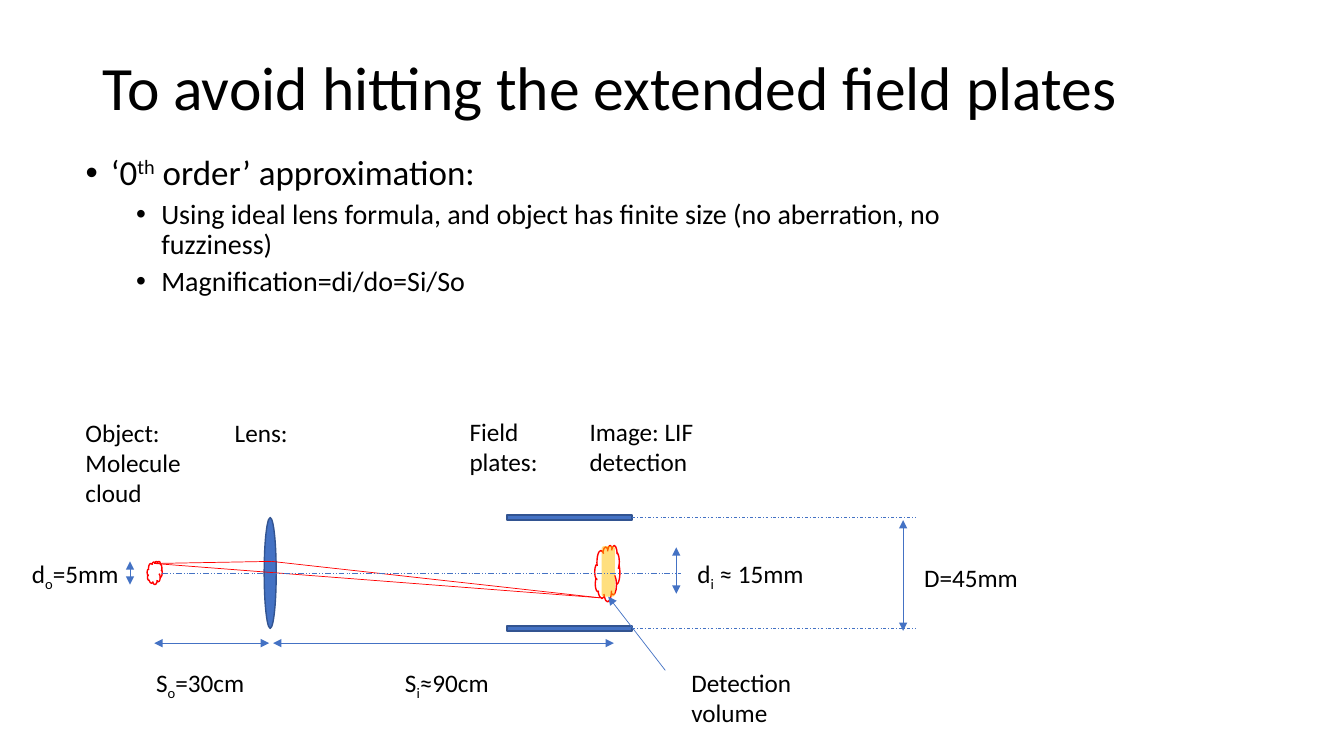
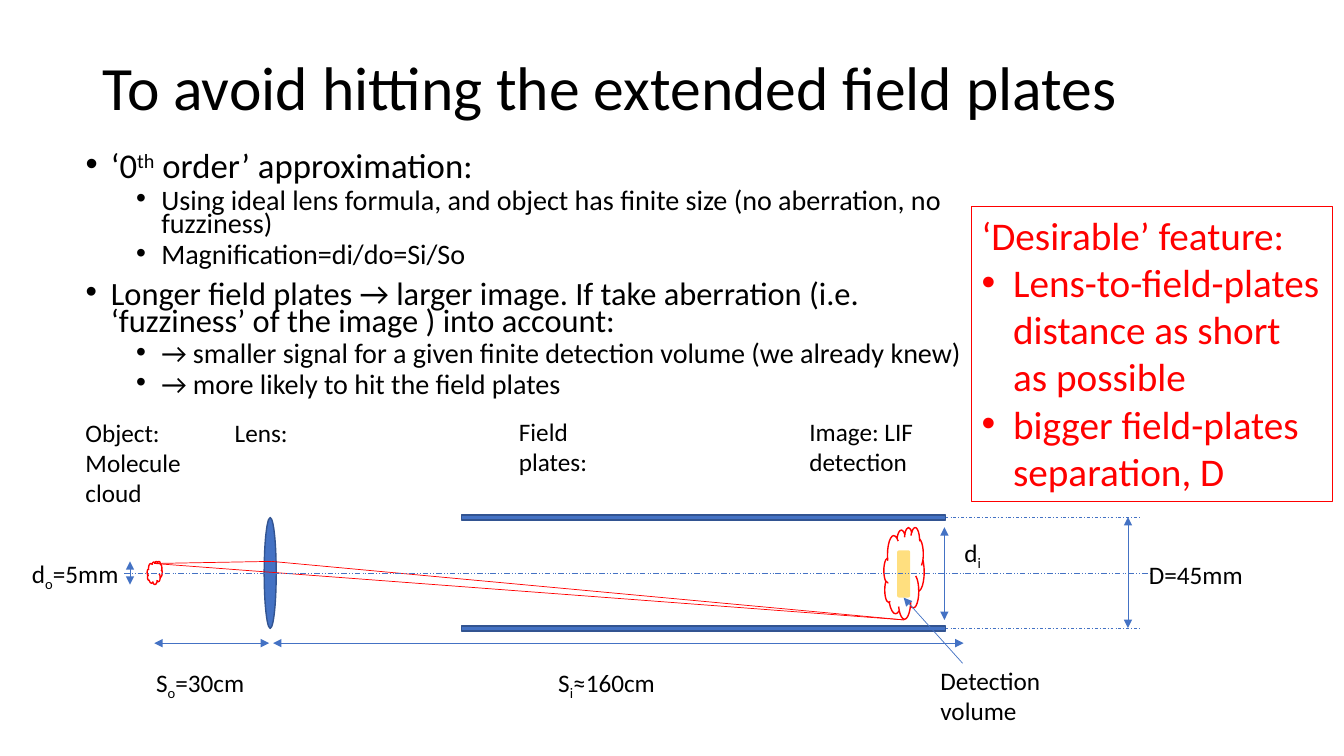
from lxml import etree
from pptx import Presentation
from pptx.dml.color import RGBColor
from pptx.enum.dml import MSO_LINE
from pptx.enum.shapes import MSO_CONNECTOR, MSO_SHAPE
from pptx.enum.text import MSO_ANCHOR, MSO_AUTO_SIZE, PP_ALIGN
from pptx.oxml.ns import qn
from pptx.util import Pt

# Constants
STRAIGHT = MSO_CONNECTOR.STRAIGHT
RECT, ROUND = MSO_SHAPE.RECTANGLE, MSO_SHAPE.ROUNDED_RECTANGLE
OVAL, CLOUD = MSO_SHAPE.OVAL, MSO_SHAPE.CLOUD
DASH, LONG = MSO_LINE.DASH_DOT, MSO_LINE.DASH_DOT_DOT
TOP, MIDDLE = MSO_ANCHOR.TOP, MSO_ANCHOR.MIDDLE
LEFT, FIXED = PP_ALIGN.LEFT, MSO_AUTO_SIZE.NONE
BOTTOM, RIGHT = 2, 3
FONT = "Calibri"
BLACK, BLUE, NAVY, RED, GOLD = "000000", "4472C4", "325491", "FF0000", "FFC000"
SHIFT = {"_": "-25000", "^": "30000"}

# Shared places, in points
AXIS = 409.7
SPAN = 459.4
START = (110.2, 402.5)
BEND = (194, 401)
HEAD = "To avoid hitting the extended field plates"
LIST = [
    (0, "‘0|^th| order’ approximation:"),
    (1, "Using ideal lens formula, and object has finite size "
        "(no aberration, no fuzziness)"),
    (1, "Magnification=di/do=Si/So"),
]
MORE = [
    (0, "Longer field plates → larger image. If take aberration "
        "(i.e. ‘fuzziness’ of the image ) into account:"),
    (1, "→ smaller signal for a given finite detection volume "
        "(we already knew)"),
    (1, "→ more likely to hit the field plates"),
]


def paint(part, hue):
    """Colour a fill or a font."""
    if hasattr(part, "solid"):
        part.solid()
        part.fore_color.rgb = RGBColor.from_string(hue)
    else:
        part.color.rgb = RGBColor.from_string(hue)


def node(home, tag, **attrs):
    return etree.SubElement(home, qn(tag), attrs)


# Text
def write(par, text, size=18, hue=BLACK, pitch=None, gap=None,
          left=0, hang=0, level=0):
    """Fill a paragraph; '|' splits runs, a leading _ or ^ shifts one."""
    par.alignment, par.level = LEFT, level
    if pitch:
        par.line_spacing = pitch
    if gap is not None:
        par.space_before = Pt(gap)
    if hang:
        props = par._p.get_or_add_pPr()
        props.set("marL", str(Pt(left)))
        props.set("indent", str(-Pt(hang)))
        node(props, "a:buFont", typeface="Arial")
        node(props, "a:buChar", char="•")
    for bit in text.split("|"):
        run = par.add_run()
        run.text = bit.lstrip("_^")
        run.font.name, run.font.size = FONT, Pt(size)
        paint(run.font, hue)
        if bit[0] in SHIFT:
            run._r.get_or_add_rPr().set("baseline", SHIFT[bit[0]])


def fill(frame, rows, anchor=TOP):
    """Write (text, format) rows, one paragraph each."""
    frame.word_wrap, frame.auto_size = True, FIXED
    frame.vertical_anchor = anchor
    for i, (text, style) in enumerate(rows):
        par = frame.add_paragraph() if i else frame.paragraphs[0]
        write(par, text, **style)


def label(slide, text, x, y, wide=88, high=29):
    box = slide.shapes.add_textbox(Pt(x), Pt(y), Pt(wide), Pt(high))
    fill(box.text_frame, [(row, {}) for row in text.split("\n")])


def place(shape, x, y, wide, high):
    shape.left, shape.top = Pt(x), Pt(y)
    shape.width, shape.height = Pt(wide), Pt(high)


def start(deck, items, sizes, pitch):
    """Add a slide with its title and bullet list."""
    slide = deck.slides.add_slide(deck.slide_layouts[1])
    title, body = slide.placeholders
    place(title, 66, 12.5, 828, 104.4)
    fill(title.text_frame, [(HEAD, dict(size=44, pitch=0.9))], MIDDLE)
    place(body, 54, 107.3, 661, 194.4)
    fill(body.text_frame, [
        (text, dict(size=size, pitch=pitch, gap=5 if level else 10,
                    left=54 if level else 18, hang=18, level=level))
        for (level, text), size in zip(items, sizes)])
    return slide


# Shapes and lines
def shape(slide, kind, box, inside=None, edge=None, alpha=None):
    item = slide.shapes.add_shape(kind, *map(Pt, box))
    item.shadow.inherit = False
    if inside:
        paint(item.fill, inside)
    else:
        item.fill.background()
    if edge:
        paint(item.line.fill, edge)
        item.line.width = Pt(1)
    else:
        item.line.fill.background()
    if alpha:
        tone = item._element.spPr.find(qn("a:solidFill"))[0]
        node(tone, "a:alpha", val=str(alpha * 1000))
    return item


def line(slide, a, b, hue=BLUE, dash=None, ends=()):
    item = slide.shapes.add_connector(STRAIGHT, *map(Pt, a + b))
    paint(item.line.fill, hue)
    item.line.width = Pt(0.5)
    if dash:
        item.line.dash_style = dash
    props = item._element.spPr
    for end in ends:
        node(props.find(qn("a:ln")), f"a:{end}End", type="triangle")
    node(props, "a:effectLst")
    return item


def span(slide, a, b):
    line(slide, a, b, ends=("head", "tail"))


def plate(slide, x, y, wide, stop):
    """A field plate and the guide that runs on from it."""
    bar = shape(slide, RECT, (x, y, wide, 3.6), BLUE, NAVY)
    mid = y + 1.8
    guide = line(slide, (x + wide, mid), (stop, mid), dash=DASH)
    guide.begin_connect(bar, RIGHT)


# Drawing of the beam line
def scene(slide, bar, cloud, glow, tip, axis, image, gap, reach, note):
    """image and gap: x, top and bottom of their height arrows."""
    shape(slide, OVAL, (188.7, 369.7, 8.6, 79.2), BLUE, NAVY)
    shape(slide, CLOUD, (105.1, 401, 10.8, 16.6), edge=RED)
    shape(slide, CLOUD, cloud, edge=RED)
    for y in (368, 447.1):
        plate(slide, bar[0], y, bar[1], gap[0] + 9)

    span(slide, (START[0], SPAN), (192.2, SPAN))
    span(slide, (195.1, SPAN), (reach, SPAN))
    for x, top, base in ((92.9, 401, 417.6), image, gap):
        span(slide, (x, top), (x, base))

    spot = shape(slide, ROUND, glow, GOLD, alpha=50)
    arrow = line(slide, note, (glow[0], glow[1]), ends=("tail",))
    arrow.end_connect(spot, BOTTOM)
    for a, b in ((START, BEND), (BEND, tip), (START, tip)):
        line(slide, a, b, RED)
    line(slide, (axis[0], AXIS), (axis[1], AXIS), dash=LONG)

    label(slide, "d|_o|=5mm", 15.8, 395.3)
    label(slide, "Object:\nMolecule\ncloud", 54, 294.5, high=73)
    label(slide, "Lens:", 160.6, 294.5)
    label(slide, "S|_o|=30cm", 104.4, 473)


def names(slide, plates, image, far, size, gap, note):
    """Labels that move; each is x, or text and place."""
    label(slide, "Field plates:", plates, 293.8, high=51)
    label(slide, "Image: LIF detection", image, 293.8, 110, 51)
    label(slide, far[0], far[1], 473)
    label(slide, *size, wide=110)
    label(slide, "D=45mm", *gap)
    label(slide, "Detection volume", *note, wide=110, high=51)


def wish(slide):
    box = slide.shapes.add_textbox(Pt(694.1), Pt(147.6), Pt(257.8), Pt(211))
    paint(box.line.fill, RED)
    box.line.width = Pt(0.75)
    look = dict(size=28, hue=RED)
    dot = dict(look, left=22.5, hang=22.5)
    fill(box.text_frame, [
        ("‘Desirable’ feature:", look),
        ("Lens-to-field-plates distance as short as possible", dot),
        ("bigger field-plates separation, D", dot)])


def main():
    deck = Presentation()
    deck.slide_width, deck.slide_height = Pt(960), Pt(540)

    # Short plates
    slide = start(deck, LIST, (25, 20, 20), 0.9)
    scene(slide, bar=(362.2, 89.3), cloud=(424.8, 389.5, 18, 40.3),
          glow=(429.8, 390.2, 9.4, 36), tip=(428.4, 427),
          axis=(115.9, 486.7), image=(483.1, 391, 424.1),
          gap=(645.1, 371.5, 450.7), reach=438.5, note=(475.2, 478.8))
    names(slide, 328.3, 414, ("S|_i|≈90cm", 282.2),
          ("d|_i| ≈ 15mm", 491, 395.3), (653, 398.2), (486.7, 473))

    # Long plates
    slide = start(deck, LIST + MORE,
                  (24.8, 20.1, 20.1, 23.2, 20.1, 20.1), 0.7)
    scene(slide, bar=(329.8, 345.6), cloud=(631.4, 376.6, 28.8, 65.5),
          glow=(640.8, 393.1, 9.4, 33.8), tip=(645.8, 442.8),
          axis=(88.6, 823), image=(674.6, 376.6, 442.8),
          gap=(805.7, 369.4, 448.6), reach=688.3, note=(687.6, 473.8))
    names(slide, 363.6, 571, ("S|_i|≈160cm", 391.7),
          ("d|_i", 681.8, 380.2), (813.6, 396), (664.6, 471.6))
    wish(slide)

    deck.save("out.pptx")


if __name__ == "__main__":
    main()
